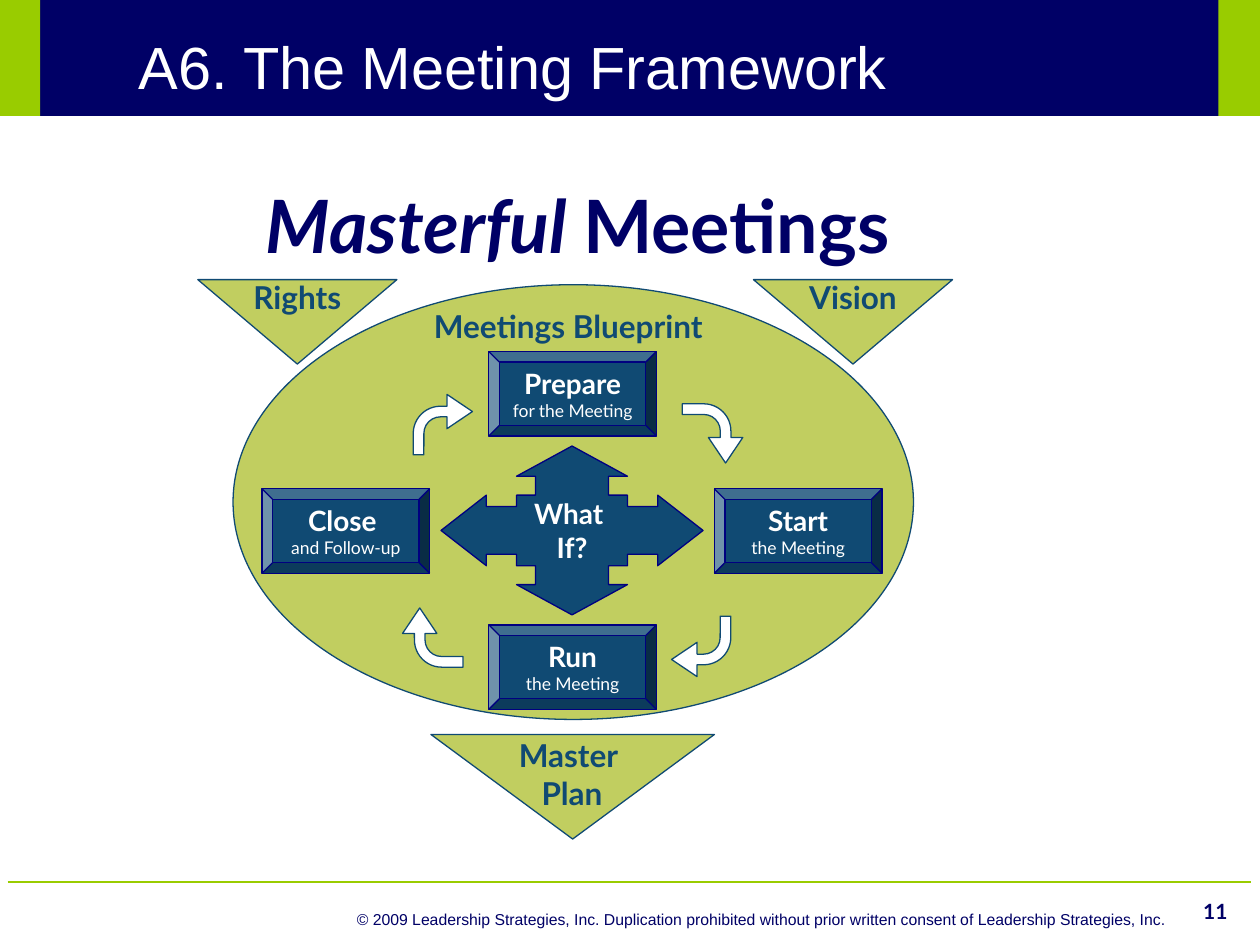
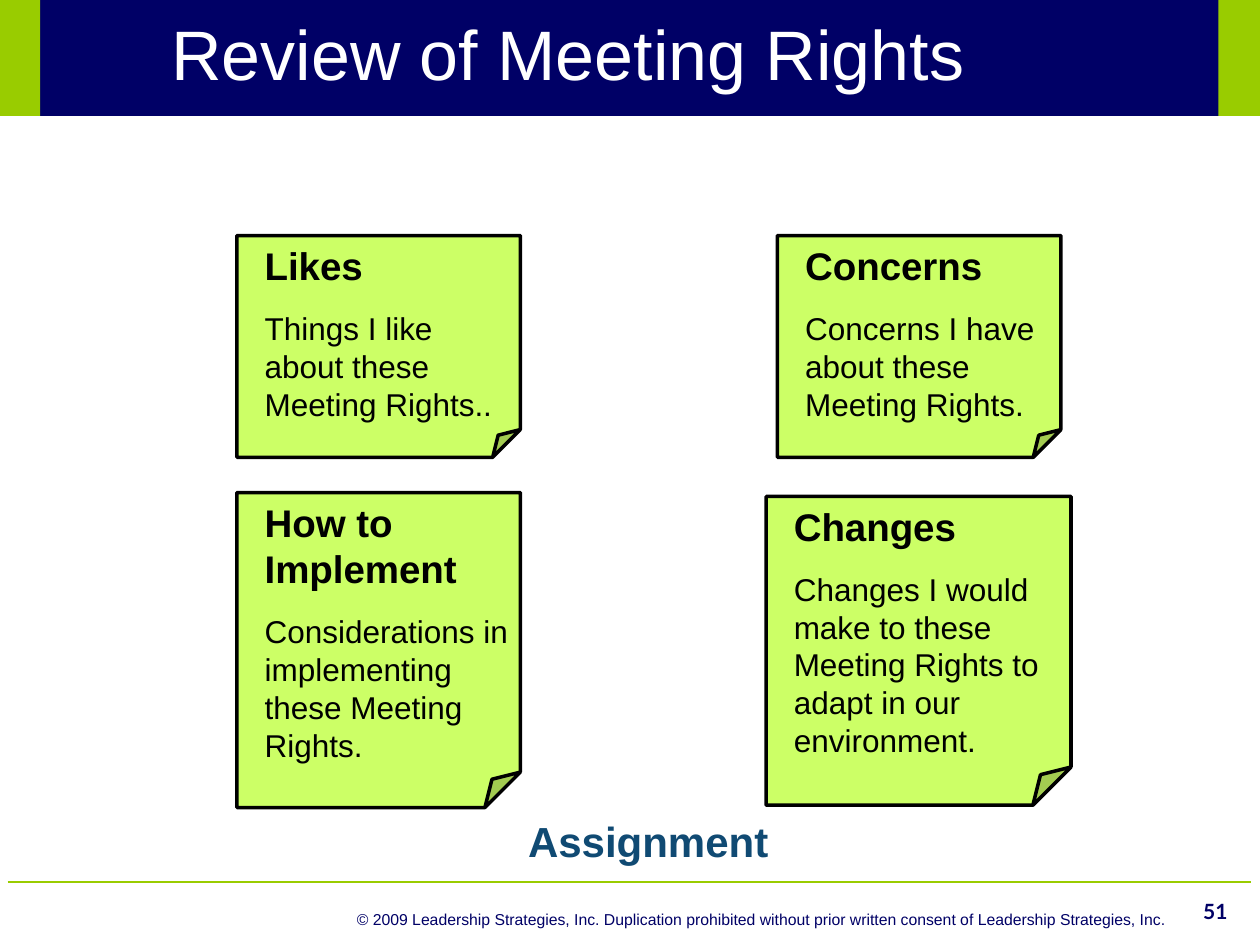
"""Builds two training slides: the meeting framework and the review of rights."""
from pptx import Presentation
from pptx.dml.color import RGBColor
from pptx.enum.shapes import MSO_CONNECTOR, MSO_SHAPE as SHAPE
from pptx.enum.text import MSO_ANCHOR as ANCHOR, MSO_AUTO_SIZE, PP_ALIGN as ALIGN
from pptx.oxml.ns import qn
from pptx.util import Inches, Pt
from lxml.etree import SubElement

COLORS = {
    "navy": "000066", "lime": "99CC00", "white": "FFFFFF", "black": "000000",
    "olive": "C1CE60", "teal": "104A73", "edge": "000080", "note": "CCFF66",
}
COPYRIGHT = ("© 2009 Leadership Strategies, Inc. Duplication prohibited without "
             "prior written consent of Leadership Strategies, Inc.")


def rgb(name):
    return RGBColor.from_string(COLORS[name])


def style_font(font, size, color, name="Lato", bold=False):
    font.name, font.size, font.bold = name, Pt(size), bold
    font.color.rgb = rgb(color)


def paint(sp, fill, line=None, width=0.75):
    sp.shadow.inherit = False
    sp.fill.solid()
    sp.fill.fore_color.rgb = rgb(fill)
    if line:
        sp.line.color.rgb = rgb(line)
        sp.line.width = Pt(width)
    else:
        sp.line.fill.background()


def add_shape(s, kind, box, fill, line=None, width=0.75):
    sp = s.shapes.add_shape(kind, *map(Inches, box))
    paint(sp, fill, line, width)
    return sp


def write(sp, lines, color, name="Lato", align=ALIGN.CENTER, anchor=ANCHOR.MIDDLE,
          wrap=False, gap=0):
    tf = sp.text_frame
    tf.word_wrap, tf.vertical_anchor = wrap, anchor
    for i, (text, size, bold) in enumerate(lines):
        p = tf.add_paragraph() if i else tf.paragraphs[0]
        p.text, p.alignment = text, align
        style_font(p.font, size, color, name, bold)
        if i and gap:
            p.space_before = Pt(gap)


def add_label(s, box, lines, color, name="Lato", align=ALIGN.CENTER, wrap=False):
    sp = s.shapes.add_textbox(*map(Inches, box))
    write(sp, lines, color, name, align, ANCHOR.TOP, wrap)
    return sp


def add_framed_slide(prs, title, size, box, number):
    s = prs.slides.add_slide(prs.slide_layouts[5])
    add_shape(s, SHAPE.RECTANGLE, (0, 0, 10, 0.92), "navy")
    rule = s.shapes.add_connector(MSO_CONNECTOR.STRAIGHT, Inches(0.06), Inches(7),
                                  Inches(9.93), Inches(7))
    rule.line.color.rgb = rgb("lime")
    rule.line.width = Pt(0.75)
    SubElement(rule.element.spPr, qn("a:effectLst"))
    for x in (-0.01, 9.67):
        add_shape(s, SHAPE.RECTANGLE, (x, -0.01, 0.33, 0.93), "lime")
    add_label(s, (2.08, 7.17, 7.92, 0.25), [(COPYRIGHT, 9, False)], "navy", "Arial",
              wrap=True)
    add_label(s, (9.42, 7.08, 0.42, 0.25), [(number, 12, True)], "navy",
              align=ALIGN.RIGHT, wrap=True)
    sp = s.shapes.title
    sp.left, sp.top, sp.width, sp.height = map(Inches, box)
    write(sp, [(title, size, False)], "white", "Arial", ALIGN.LEFT, wrap=True)
    sp.text_frame.auto_size = MSO_AUTO_SIZE.NONE
    sp.element.getparent().append(sp.element)
    return s


def add_pennant(s, box, text=None):
    sp = add_shape(s, SHAPE.ISOSCELES_TRIANGLE, box, "olive", "teal")
    sp.element.spPr.xfrm.set("flipV", "1")
    if text:
        write(sp, [(text, 18, True)], "teal", anchor=ANCHOR.BOTTOM)
        sp.element.txBody.find(qn("a:bodyPr")).set("rot", "10800000")


def add_stage(s, x, y, name, detail):
    sp = add_shape(s, SHAPE.BEVEL, (x, y, 1.33, 0.67), "teal", "edge")
    write(sp, [(name, 16, True), (detail, 10, False)], "white")


def add_turn_arrow(s, x, y, rotation):
    sp = add_shape(s, SHAPE.BENT_ARROW, (x, y, 0.47, 0.48), "white", "teal")
    for i, value in enumerate((0.18, 0.29, 0.43, 0.46)):
        sp.adjustments[i] = value
    sp.rotation = rotation


def add_hub(s, cx, cy):
    quarter = [(0, -0.67), (0.44, -0.43), (0.29, -0.43), (0.29, -0.28), (0.44, -0.28),
               (0.44, -0.19), (0.68, -0.19), (0.68, -0.28), (1.04, 0)]
    right = quarter + [(x, -y) for x, y in quarter[-2::-1]]
    left = [(-x, y) for x, y in right[-2:0:-1]]
    points = [(Inches(cx + x), Inches(cy + y)) for x, y in right + left]
    builder = s.shapes.build_freeform(*points[0])
    builder.add_line_segments(points[1:], close=True)
    sp = builder.convert_to_shape()
    paint(sp, "teal", "edge")
    write(sp, [("What ", 16, True), ("If?", 16, True)], "white")


def add_note(s, box, heading, body):
    sp = add_shape(s, SHAPE.FOLDED_CORNER, box, "note", "black", 2)
    guides = sp.element.spPr.find(qn("a:prstGeom")).find(qn("a:avLst"))
    SubElement(guides, qn("a:gd"), name="adj", fmla="val 12500")
    sp.text_frame.margin_left = Inches(0.22)
    write(sp, [(heading, 22, True), (body, 18, False)], "black", "Arial", ALIGN.LEFT,
          ANCHOR.TOP, wrap=True, gap=12)


def build_framework(prs):
    s = add_framed_slide(prs, "A6. The Meeting Framework", 34, (1, 0.17, 8.74, 0.7), "11")
    add_shape(s, SHAPE.OVAL, (1.85, 2.26, 5.4, 3.45), "olive", "teal")
    for stage in ((3.88, 2.79, "Prepare", "for the Meeting"),
                  (3.88, 4.96, "Run", "the Meeting"),
                  (2.08, 3.88, "Close ", "and Follow-up"),
                  (5.67, 3.88, "Start", "the Meeting")):
        add_stage(s, *stage)
    add_hub(s, 4.54, 4.21)
    corners = ((3.28, 3.13), (5.42, 3.2), (5.33, 4.89), (3.2, 4.82))
    for i, (x, y) in enumerate(corners):
        add_turn_arrow(s, x, y, 90 * i)
    add_pennant(s, (1.57, 2.22, 1.58, 0.67), "Rights")
    add_pennant(s, (5.98, 2.22, 1.58, 0.67), "Vision")
    add_label(s, (3.22, 2.39, 2.58, 0.4), [("Meetings Blueprint", 18, True)], "teal")
    add_pennant(s, (3.42, 5.83, 2.25, 0.83))
    add_label(s, (3.97, 5.79, 1.14, 0.7), [("Master ", 18, True), ("Plan", 18, True)],
              "teal")
    sp = add_label(s, (1.64, 1.38, 5.89, 0.81), [("Masterful ", 42, True)], "navy")
    p = sp.text_frame.paragraphs[0]
    p.runs[0].font.italic = True
    p.add_run().text = "Meetings"


def build_review(prs):
    s = add_framed_slide(prs, "Review of Meeting Rights", 40, (1.26, -0.08, 8.52, 1), "51")
    add_note(s, (1.88, 1.87, 2.25, 1.76), "Likes",
             "Things I like about these Meeting Rights..")
    add_note(s, (6.17, 1.87, 2.25, 1.76), "Concerns",
             "Concerns I have about these Meeting Rights.")
    add_note(s, (6.08, 3.94, 2.42, 2.45), "Changes",
             "Changes I would make to these Meeting Rights to adapt in our environment.")
    add_note(s, (1.88, 3.91, 2.25, 2.5), "How to Implement",
             "Considerations in implementing these Meeting Rights.")
    add_label(s, (4.08, 6.42, 2.13, 0.51), [("Assignment", 24, True)], "teal", "Arial")


def main():
    prs = Presentation()
    prs.slide_width, prs.slide_height = Inches(10), Inches(7.5)
    build_framework(prs)
    build_review(prs)
    prs.save("out.pptx")


if __name__ == "__main__":
    main()
